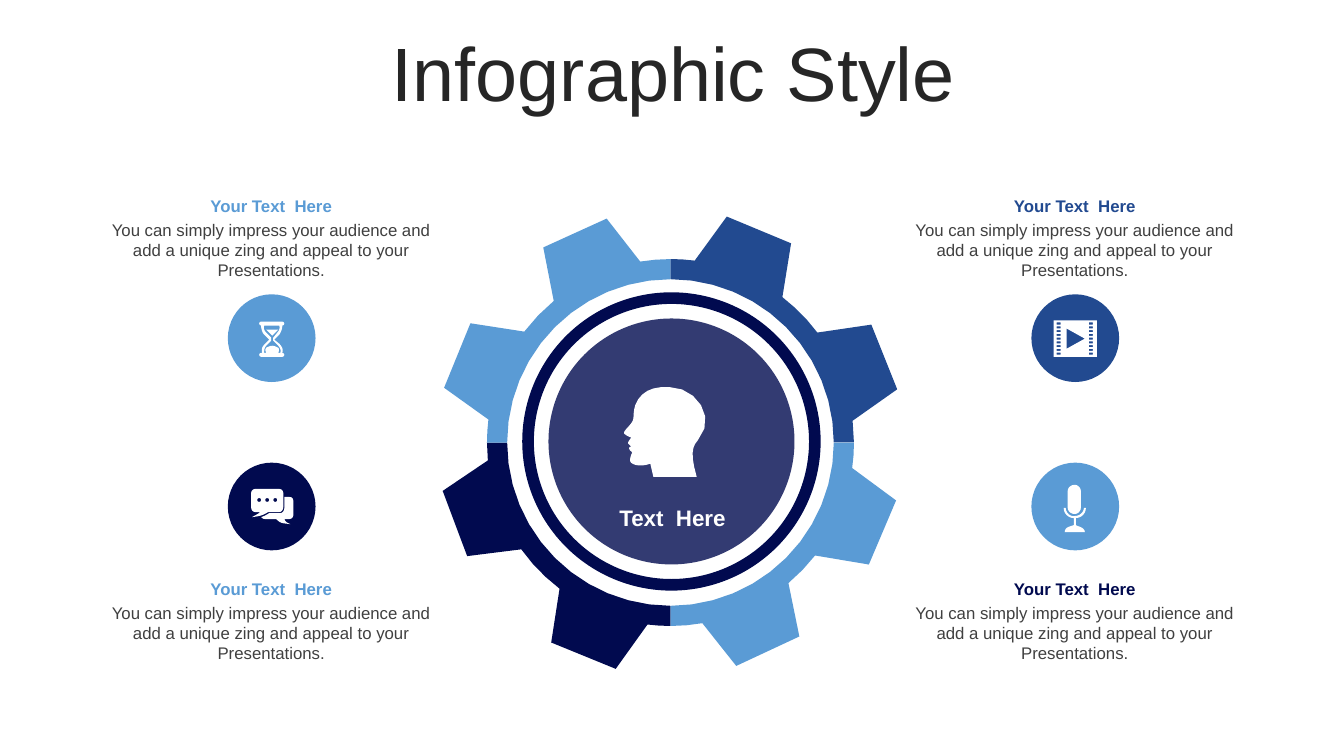
from dataclasses import dataclass
from math import ceil, cos, dist, radians, sin

from lxml import etree
from pptx import Presentation
from pptx.dml.color import RGBColor
from pptx.enum.shapes import MSO_SHAPE
from pptx.enum.text import MSO_ANCHOR, MSO_AUTO_SIZE, PP_ALIGN
from pptx.oxml.ns import qn
from pptx.util import Cm, Pt

CENTER = PP_ALIGN.CENTER
MIDDLE, TOP = MSO_ANCHOR.MIDDLE, MSO_ANCHOR.TOP
GROW, FIXED = MSO_AUTO_SIZE.SHAPE_TO_FIT_TEXT, MSO_AUTO_SIZE.NONE
OVAL, DONUT = MSO_SHAPE.OVAL, MSO_SHAPE.DONUT

SKY, BLUE, NAVY, WHITE = "5A9BD5", "224A90", "010A4F", "FFFFFF"
BODY = ("You can simply impress your audience and add a unique zing "
        "and appeal to your Presentations.")

Point = tuple[float, float]
Contour = list[Point]

GEAR_CENTER = (6.65, 4.39)
INNER_RADIUS, OUTER_RADIUS, TIP_RADIUS = 1.62, 1.82, 2.31
HALF_BASE, HALF_TIP = 15, 8.6


@dataclass
class GearQuarter:
    start: float
    teeth: tuple[float, float]
    fill: str


@dataclass
class Topic:
    left: float
    heading_top: float
    circle_top: float
    heading_color: str
    circle_color: str


QUARTERS = [
    GearQuarter(0, (22.6, 68.2), BLUE),
    GearQuarter(90, (113, 155), SKY),
    GearQuarter(180, (202.2, 249.4), NAVY),
    GearQuarter(270, (292.2, 335.5), SKY),
]
TOPICS = [
    Topic(1, 1.89, 2.92, SKY, SKY),
    Topic(8.97, 1.89, 2.92, BLUE, BLUE),
    Topic(1, 5.69, 4.59, SKY, NAVY),
    Topic(8.97, 5.69, 4.59, NAVY, SKY),
]

# Outlines in hundredths of an inch: M starts a contour, L is a line, C a curve.
HOURGLASS = """
M 270 343 C 272 343 274 344 276 345 C 277 346 277 348 276 350 L 264 350
C 263 348 263 346 264 345 C 266 344 268 343 270 343
M 264 327 L 276 327 L 275 328 L 270 333 L 265 328
M 262 323 C 261 325 262 328 264 330 L 269 335 L 269 338 L 264 343 C 262 345 262 348 262 350
L 278 350 C 279 348 278 345 276 343 L 271 338 L 271 335 L 275 330 C 277 328 278 325 277 323
M 259 319 L 280 319 C 281 319 282 320 282 321 C 282 322 281 323 280 323
C 280 326 279 329 277 332 L 272 337 L 277 341 C 280 344 281 347 280 350
C 281 350 282 351 282 352 C 282 353 281 354 280 354 L 259 354
C 258 354 257 353 257 352 C 257 351 258 350 259 350 L 260 350
C 259 347 260 344 262 342 L 267 337 L 262 332 C 260 330 259 326 259 323
C 258 323 257 322 257 321 C 257 320 258 319 259 319"""
SPEECH_BUBBLES = """
M 282 493 L 287 493 C 289 493 291 494 291 497 L 291 511 C 291 513 289 515 287 515
L 282 515 C 283 517 283 518 288 520 C 279 519 278 519 274 515 L 263 515
C 261 515 260 514 259 513 C 262 512 264 511 267 509 L 278 509 C 280 509 282 507 282 504
M 253 485 L 277 485 C 279 485 281 487 281 489 L 281 503 C 281 506 279 508 277 508
L 266 508 C 261 511 259 512 250 513 C 255 510 256 510 258 508 L 253 508
C 251 508 249 506 249 503 L 249 489 C 249 487 251 485 253 485"""
MICROPHONE = """
M 1077 504 C 1077 509 1073 514 1067 514 L 1067 521 L 1069 522
C 1073 523 1076 525 1076 528 L 1056 528 C 1056 525 1058 523 1062 522
L 1065 521 L 1065 514 C 1060 514 1055 510 1055 504 L 1057 504
C 1057 509 1062 513 1066 512 C 1071 512 1075 508 1075 504
M 1066 481 C 1069 481 1072 484 1072 487 L 1072 504 C 1072 507 1069 510 1066 510
C 1062 510 1059 507 1059 504 L 1059 487 C 1059 484 1062 481 1066 481"""
HEAD = """
M 664 384 C 646 383 635 389 630 402 C 627 412 630 415 626 420 C 623 424 618 428 619 430
C 621 432 623 433 626 434 C 625 436 622 439 623 440 L 626 443 C 625 443 623 444 624 445
C 624 447 627 448 627 449 C 625 453 624 458 626 459 C 629 462 637 463 645 460
L 648 473 L 691 473 C 685 452 686 443 692 437 C 712 414 690 384 664 384"""


def inches(value: float) -> int:
    return Cm(value * 2.54)


def color(value: str) -> RGBColor:
    return RGBColor.from_string(value)


def set_values(target, values: dict) -> None:
    for name, value in values.items():
        setattr(target, name, value)


def paint(shape, fill: str) -> None:
    shape.shadow.inherit = False
    shape.fill.solid()
    shape.fill.fore_color.rgb = color(fill)
    shape.line.fill.background()


def polar(center: Point, radius: float, angle: float) -> Point:
    """Angles run clockwise from twelve o'clock."""
    turn = radians(angle)
    return center[0] + radius * sin(turn), center[1] - radius * cos(turn)


def arc(center: Point, radius: float, start: float, end: float) -> Contour:
    sweep = abs(end - start)
    steps = ceil(max(sweep / 45, radians(sweep) * radius / 0.22))
    return [polar(center, radius, start + (end - start) * step / steps)
            for step in range(steps + 1)]


def curve(points: Contour) -> Contour:
    """Sample a cubic Bezier curve after its first point, finer where it is longer."""
    steps = min(6, ceil(dist(points[0], points[-1]) / 0.02))
    result = []
    for step in range(1, steps + 1):
        t = step / steps
        weights = ((1 - t) ** 3, 3 * t * (1 - t) ** 2, 3 * t * t * (1 - t), t ** 3)
        result.append(tuple(sum(weight * point[axis] for weight, point in zip(weights, points))
                            for axis in (0, 1)))
    return result


def read_outline(outline: str) -> list[Contour]:
    tokens = iter(outline.split())
    contours = []
    for command in tokens:
        points = [(int(next(tokens)) / 100, int(next(tokens)) / 100)
                  for _ in range(3 if command == "C" else 1)]
        if command == "M":
            contours.append(points)
        elif command == "L":
            contours[-1] += points
        else:
            contours[-1] += curve([contours[-1][-1], *points])
    return contours


def rectangle(left: float, top: float, width: float, height: float) -> Contour:
    return [(left, top), (left + width, top),
            (left + width, top + height), (left, top + height)]


def film_contours() -> list[Contour]:
    holes = [rectangle(left, 3.2 + row * 0.3 / 8, 0.04, 0.02)
             for left in (10.48, 10.8) for row in range(9)]
    play = [(10.58, 3.26), (10.58, 3.46), (10.76, 3.36)]
    return [*holes, play, rectangle(10.45, 3.18, 0.43, 0.36)]


def gear_contour(quarter: GearQuarter) -> Contour:
    end = quarter.start + 90
    points = arc(GEAR_CENTER, INNER_RADIUS, end, quarter.start)
    angle = quarter.start
    for tooth in quarter.teeth:
        points += arc(GEAR_CENTER, OUTER_RADIUS, angle, tooth - HALF_BASE)
        points += [polar(GEAR_CENTER, TIP_RADIUS, tooth + side * HALF_TIP) for side in (-1, 1)]
        angle = tooth + HALF_BASE
    return points + arc(GEAR_CENTER, OUTER_RADIUS, angle, end)


def add_outline(slide, contours: list[Contour], fill: str) -> None:
    scaled = [[(inches(x), inches(y)) for x, y in contour] for contour in contours]
    builder = slide.shapes.build_freeform(*scaled[0][0])
    for index, (first, *others) in enumerate(scaled):
        if index:
            builder.move_to(*first)
        builder.add_line_segments(others, close=True)
    paint(builder.convert_to_shape(), fill)


def add_round(slide, kind, left: float, top: float, size: float, fill: str):
    shape = slide.shapes.add_shape(kind, *map(inches, (left, top, size, size)))
    paint(shape, fill)
    return shape


def add_text(slide, box: tuple, text: str, size: int, fill: str, bold: bool = False,
             anchor=TOP, auto_size=GROW, **paragraph_format) -> None:
    frame = slide.shapes.add_textbox(*map(inches, box)).text_frame
    set_values(frame, {"word_wrap": True, "auto_size": auto_size, "vertical_anchor": anchor})
    paragraph = frame.paragraphs[0]
    set_values(paragraph, {"alignment": CENTER, **paragraph_format})
    run = paragraph.add_run()
    run.text = text
    set_values(run.font, {"name": "Arial", "size": Pt(size), "bold": bold})
    run.font.color.rgb = color(fill)


def main() -> None:
    presentation = Presentation()
    set_values(presentation, {"slide_width": inches(13.33), "slide_height": inches(7.5)})
    slide = presentation.slides.add_slide(presentation.slide_layouts[6])

    add_text(slide, (0.35, 0.37, 12.66, 0.79), "Infographic Style", 54, "262626",
             anchor=MIDDLE, auto_size=FIXED, line_spacing=0.9, space_before=Pt(10))
    for quarter in QUARTERS:
        add_outline(slide, [gear_contour(quarter)], quarter.fill)
    hub = add_round(slide, OVAL, 5.44, 3.16, 2.44, NAVY)
    hub_color = next(hub.element.iter(qn("a:srgbClr")))
    etree.SubElement(hub_color, qn("a:alpha"), val="80000")
    ring = add_round(slide, DONUT, 5.18, 2.9, 2.96, NAVY)
    ring.adjustments[0] = 0.039
    add_text(slide, (5.89, 4.95, 1.56, 0.37), "Text  Here", 16, WHITE, bold=True)

    for topic in TOPICS:
        add_round(slide, OVAL, topic.left + 1.26, topic.circle_top, 0.87, topic.circle_color)
        add_text(slide, (topic.left, topic.heading_top + 0.24, 3.38, 0.71), BODY, 12, "404040")
        add_text(slide, (topic.left, topic.heading_top, 3.38, 0.3), "Your Text  Here", 12,
                 topic.heading_color, bold=True)

    bubble_dots = [arc((2.57 + 0.08 * dot, 4.96), 0.02, 0, 360) for dot in range(3)]
    icons = [read_outline(HOURGLASS), read_outline(SPEECH_BUBBLES) + bubble_dots,
             film_contours(), read_outline(MICROPHONE), read_outline(HEAD)]
    for contours in icons:
        add_outline(slide, contours, WHITE)
    presentation.save("out.pptx")


if __name__ == "__main__":
    main()
